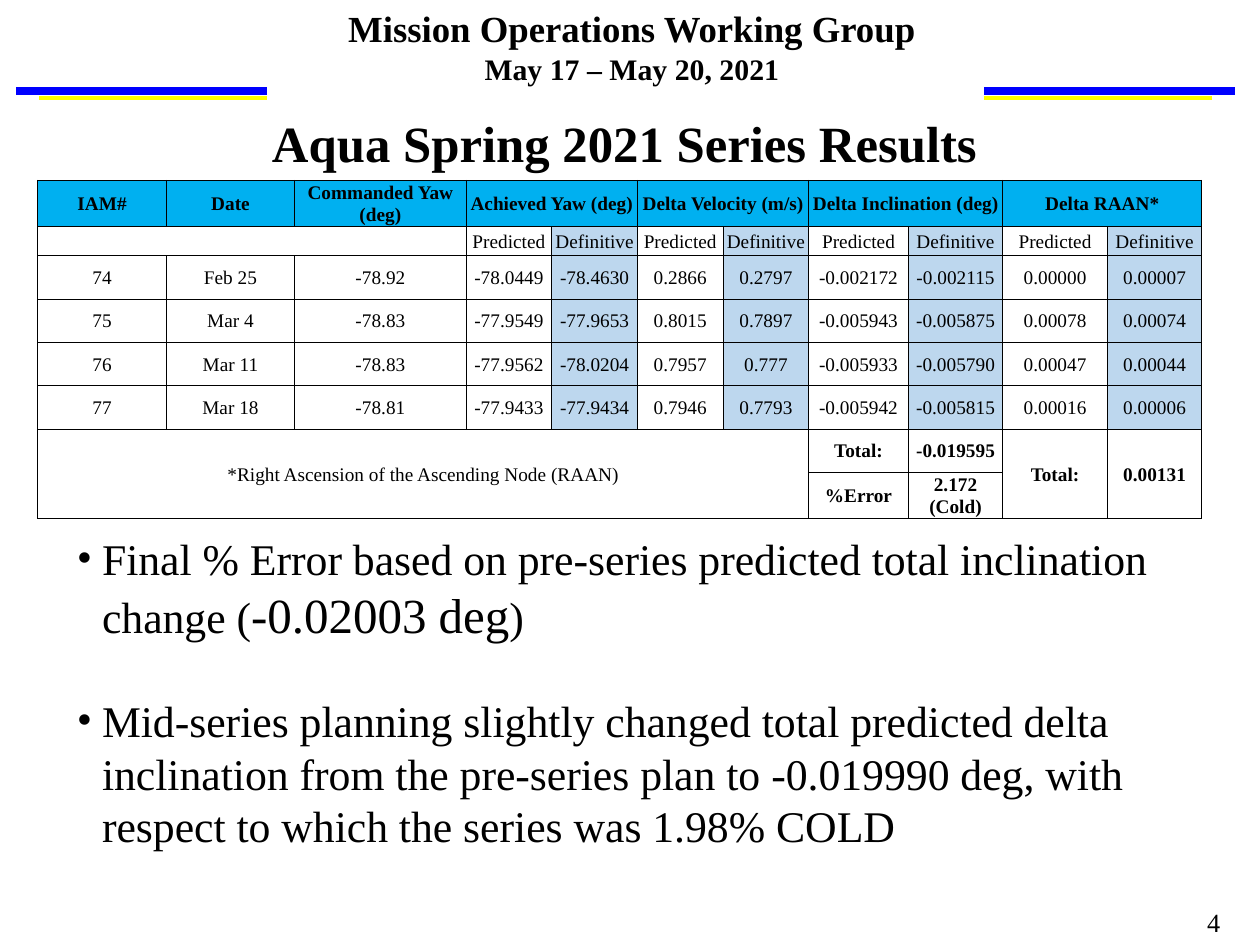
from lxml import etree
from pptx import Presentation
from pptx.dml.color import RGBColor
from pptx.enum.shapes import MSO_CONNECTOR
from pptx.enum.text import MSO_ANCHOR, MSO_AUTO_SIZE, PP_ALIGN
from pptx.oxml.ns import qn
from pptx.util import Inches, Pt

BLACK = RGBColor(0x00, 0x00, 0x00)
BLUE = RGBColor(0x00, 0x00, 0xFF)
YELLOW = RGBColor(0xFF, 0xFF, 0x00)
HEAD_FILL = RGBColor(0x00, 0xB0, 0xF0)
DEFINITIVE_FILL = RGBColor(0xBD, 0xD7, 0xEE)
FONT = "Times New Roman"


def style(p, size, bold=False, align=PP_ALIGN.CENTER):
    p.alignment = align
    for r in p.runs:
        r.font.name = FONT
        r.font.size = Pt(size)
        r.font.bold = bold
        r.font.color.rgb = BLACK


def place(sp, left, top, width, height, anchor=MSO_ANCHOR.TOP):
    sp.left, sp.top = Inches(left), Inches(top)
    sp.width, sp.height = Inches(width), Inches(height)
    tf = sp.text_frame
    tf.word_wrap = True
    tf.auto_size = MSO_AUTO_SIZE.NONE
    tf.vertical_anchor = anchor
    tf.margin_left = tf.margin_right = Inches(0.11)
    tf.margin_top = tf.margin_bottom = Inches(0.05)
    return tf


prs = Presentation()
prs.slide_width, prs.slide_height = Inches(10), Inches(7.5)
slide = prs.slides.add_slide(prs.slide_layouts[1])
shapes = slide.shapes

rules = [
    (0.13, 2.12, 0.72, BLUE, 4.5),
    (0.31, 2.12, 0.78, YELLOW, 2.25),
    (7.81, 9.8, 0.72, BLUE, 4.5),
    (7.81, 9.62, 0.78, YELLOW, 2.25),
]
for x1, x2, y, color, width in rules:
    line = shapes.add_connector(
        MSO_CONNECTOR.STRAIGHT, Inches(x1), Inches(y), Inches(x2), Inches(y))
    line.line.color.rgb = color
    line.line.width = Pt(width)
    etree.SubElement(line._element.spPr, qn("a:effectLst"))

tf = place(shapes.add_textbox(0, 0, 0, 0), 2.19, 0, 5.65, 0.76)
tf.text = "Mission Operations Working Group\nMay 17 – May 20, 2021"
for p, size in zip(tf.paragraphs, (21, 17)):
    style(p, size, bold=True)

tf = place(shapes.title, 2, 0.83, 5.92, 0.6, MSO_ANCHOR.MIDDLE)
tf.text = "Aqua Spring 2021 Series Results"
style(tf.paragraphs[0], 29, bold=True)

tf = place(slide.placeholders[1], 0.5, 4.17, 8.83, 2.68)
bullets = [
    ["Final % Error based on pre-series predicted total inclination change (",
     "-0.02003 deg", ")"],
    ["Mid-series planning slightly changed total predicted delta inclination "
     "from the pre-series plan to -0.019990 deg, with respect to which the "
     "series was 1.98% COLD"],
]
for i, parts in enumerate(bullets):
    p = tf.add_paragraph() if i else tf.paragraphs[0]
    p.space_before = Pt(29 if i else 0)
    pPr = p._p.get_or_add_pPr()
    pPr.set("marL", str(Inches(0.2)))
    pPr.set("indent", str(-Inches(0.2)))
    etree.SubElement(pPr, qn("a:buFont"), typeface=FONT)
    etree.SubElement(pPr, qn("a:buChar"), char="•")
    for part in parts:
        p.add_run().text = part
    style(p, 25, align=PP_ALIGN.LEFT)
tf.paragraphs[0].runs[1].font.size = Pt(28)

tf = place(shapes.add_textbox(0, 0, 0, 0), 9.47, 7.14, 0.53, 0.36)
tf.text = "4"
style(tf.paragraphs[0], 15, align=PP_ALIGN.LEFT)

rows = [
    ["IAM#", "Date", "Commanded Yaw (deg)", "Achieved Yaw (deg)", "",
     "Delta Velocity (m/s)", "", "Delta Inclination (deg)", "", "Delta RAAN*", ""],
    [""] * 3 + ["Predicted", "Definitive"] * 4,
    ["74", "Feb 25", "-78.92", "-78.0449", "-78.4630", "0.2866", "0.2797",
     "-0.002172", "-0.002115", "0.00000", "0.00007"],
    ["75", "Mar 4", "-78.83", "-77.9549", "-77.9653", "0.8015", "0.7897",
     "-0.005943", "-0.005875", "0.00078", "0.00074"],
    ["76", "Mar 11", "-78.83", "-77.9562", "-78.0204", "0.7957", "0.777",
     "-0.005933", "-0.005790", "0.00047", "0.00044"],
    ["77", "Mar 18", "-78.81", "-77.9433", "-77.9434", "0.7946", "0.7793",
     "-0.005942", "-0.005815", "0.00016", "0.00006"],
    ["*Right Ascension of the Ascending Node (RAAN)"] + [""] * 6
    + ["Total:", "-0.019595", "Total:", "0.00131"],
    [""] * 7 + ["%Error", "2.172 (Cold)", "", ""],
]
col_widths = [1.02, 1.02, 1.36] + [0.68] * 4 + [0.79, 0.75, 0.83, 0.75]
table_height, tall, short = 2.69, 0.37, 0.23
regular = (table_height - 2 * tall - short) / 5
row_heights = [tall, short] + [regular] * 5 + [tall]

frame = shapes.add_table(len(rows), len(col_widths), Inches(0.3), Inches(1.43),
                         Inches(sum(col_widths)), Inches(table_height))
table = frame.table
table.first_row = table.horz_banding = False
for col, width in zip(table.columns, col_widths):
    col.width = Inches(width)
for row, height in zip(table.rows, row_heights):
    row.height = Inches(height)

for i, texts in enumerate(rows):
    for j, text in enumerate(texts):
        cell = table.cell(i, j)
        cell.margin_left = cell.margin_right = cell.margin_top = Inches(0.01)
        cell.margin_bottom = 0
        cell.vertical_anchor = MSO_ANCHOR.MIDDLE
        p = cell.text_frame.paragraphs[0]
        if text:
            p.text = text
            style(p, 11, bold=i == 0 or (i >= 6 and j >= 7))
        else:
            etree.SubElement(p._p, qn("a:endParaRPr"), sz="1100")
        if i == 0:
            cell.fill.solid()
            cell.fill.fore_color.rgb = HEAD_FILL
        elif i < 6 and j in (4, 6, 8, 10):
            cell.fill.solid()
            cell.fill.fore_color.rgb = DEFINITIVE_FILL
        else:
            cell.fill.background()
        tcPr = cell._tc.get_or_add_tcPr()
        for k, side in enumerate(("lnL", "lnR", "lnT", "lnB")):
            ln = etree.Element(qn(f"a:{side}"), w=str(Pt(0.5)))
            fill = etree.SubElement(ln, qn("a:solidFill"))
            etree.SubElement(fill, qn("a:srgbClr"), val=str(BLACK))
            tcPr.insert(k, ln)

spans = [(0, j, 0, j + 1) for j in (3, 5, 7, 9)]
spans += [(1, 0, 1, 2), (6, 0, 7, 6), (6, 9, 7, 9), (6, 10, 7, 10)]
for top, left, bottom, right in spans:
    table.cell(top, left).merge(table.cell(bottom, right))

prs.save("out.pptx")
